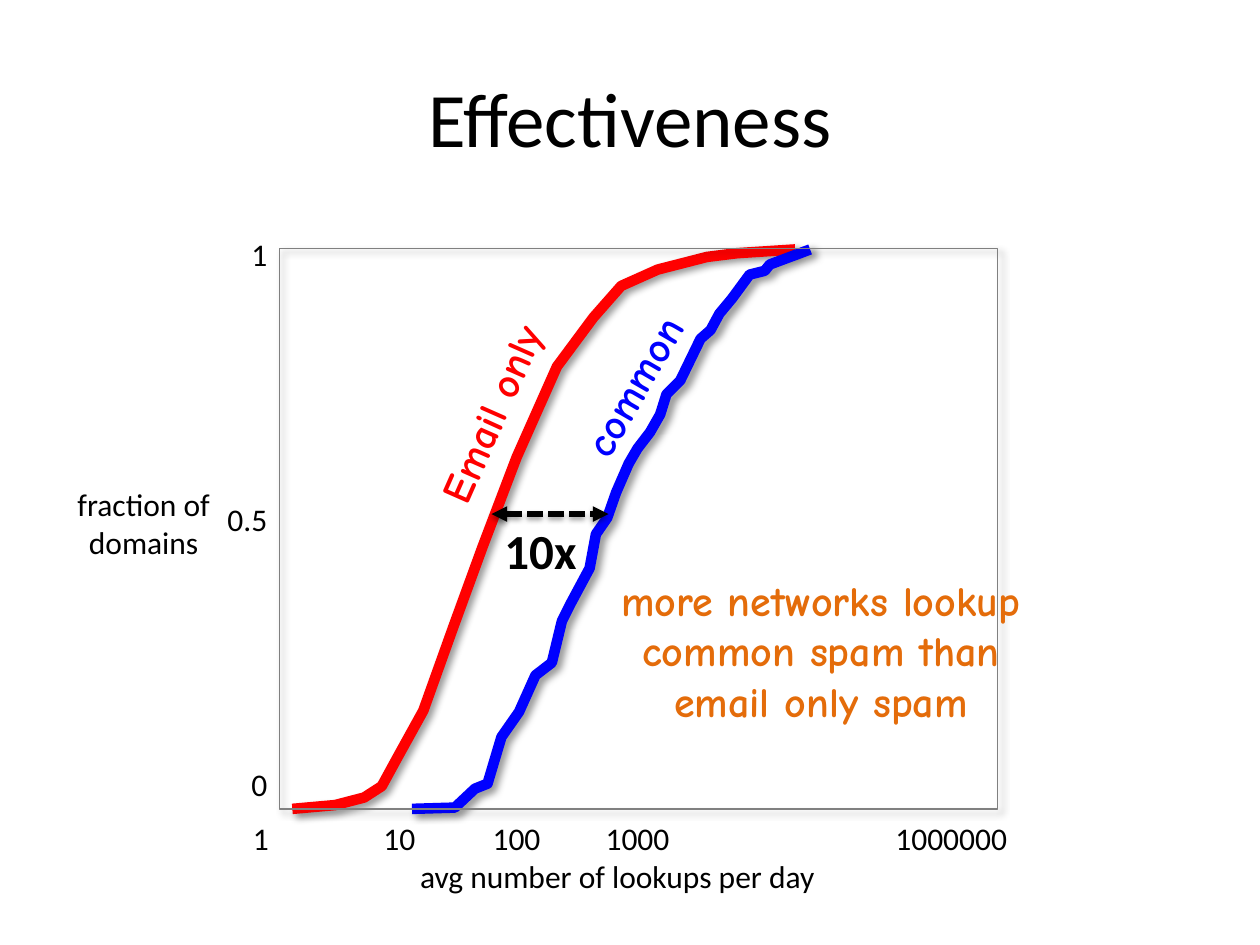
"""Build the Effectiveness slide: two cumulative curves of lookups per day."""
import pptx
import pptx.util
import pptx.dml.color
import pptx.enum.dml
import pptx.enum.shapes
import pptx.enum.text
import pptx.oxml
import pptx.oxml.ns

Inches = pptx.util.Inches
Pt = pptx.util.Pt
RGBColor = pptx.dml.color.RGBColor
Align = pptx.enum.text.PP_ALIGN
Anchor = pptx.enum.text.MSO_ANCHOR

BLACK = RGBColor(0, 0, 0)
RED = RGBColor(255, 0, 0)
BLUE = RGBColor(0, 0, 255)
GRAY = RGBColor(0x80, 0x80, 0x80)
ORANGE = RGBColor(0xE4, 0x6C, 0x0A)
BODY, HAND = "Calibri", "Comic Neue"

CURVES = [
    (RED, [(2.32, 6.42), (2.66, 6.39), (2.89, 6.33), (3.03, 6.24), (3.15, 6.02),
           (3.36, 5.64), (3.6, 4.97), (3.83, 4.34), (4.1, 3.63), (4.42, 2.91),
           (4.71, 2.52), (4.93, 2.27), (5.22, 2.14), (5.61, 2.04), (5.85, 2.01),
           (6.31, 1.98)]),
    (BLUE, [(3.27, 6.42), (3.61, 6.41), (3.77, 6.26), (3.87, 6.22), (3.98, 5.85),
            (4.12, 5.65), (4.25, 5.36), (4.38, 5.26), (4.46, 4.93), (4.53, 4.79),
            (4.68, 4.51), (4.73, 4.24), (4.82, 4.11), (4.89, 3.91), (4.99, 3.68),
            (5.06, 3.56), (5.16, 3.43), (5.24, 3.29), (5.29, 3.13), (5.4, 3.02),
            (5.56, 2.69), (5.64, 2.62), (5.71, 2.49), (5.81, 2.37), (5.95, 2.18),
            (6.07, 2.15), (6.11, 2.1), (6.43, 1.98)]),
]
PLOT = (2.22, 1.97, 5.7, 4.45)
X_TICKS = [("1", 2.07), ("10", 3.17), ("100", 4.1), ("1000", 5.06), ("1000000", 7.55)]
Y_TICKS = ["1", "0.5", "0"]
Y_TICK_TOP, Y_TICK_GAP = 1.82, 2.1
TICK_WIDTH, TICK_HEIGHT = 1.2, 0.4
CENTERED_LABELS = [
    (["avg number of lookups per day"], (1.58, 6.75, 6.64, 0.4), 18, BODY, BLACK, False, 0),
    (["fraction of", "domains"], (0.5, 3.8, 1.28, 0.71), 18, BODY, BLACK, False, 0),
    (["common"], (4.31, 2.81, 1.43, 0.5), 24, HAND, BLUE, True, 300.1),
    (["Email only"], (2.94, 3.03, 1.91, 0.5), 24, HAND, RED, True, 293.8),
    (["10x"], (3.9, 4.08, 0.78, 0.57), 28, BODY, BLACK, True, 0),
    (["more networks lookup", "common spam than", "email only spam"],
     (4.67, 4.51, 3.69, 1.31), 24, HAND, ORANGE, True, 0),
]


def add_run(paragraph, text, size, font, color, bold=False):
    run = paragraph.add_run()
    run.text = text
    run.font.size = Pt(size)
    run.font.name = font
    run.font.bold = bold
    run.font.color.rgb = color


def add_label(slide, lines, box, size=18, font=BODY, color=BLACK, bold=False,
              rotation=0, align=Align.CENTER):
    label = slide.shapes.add_textbox(*map(Inches, box))
    label.rotation = rotation
    frame = label.text_frame
    frame.word_wrap = False
    for index, line in enumerate(lines):
        paragraph = frame.paragraphs[0] if index == 0 else frame.add_paragraph()
        paragraph.alignment = align
        add_run(paragraph, line, size, font, color, bold)


def set_shadow(shape, alpha=40, blur=4, distance=3, angle=45):
    properties = shape._element.spPr
    for old in properties.findall(pptx.oxml.ns.qn("a:effectLst")):
        properties.remove(old)
    properties.append(pptx.oxml.parse_xml(
        f'<a:effectLst {pptx.oxml.ns.nsdecls("a")}>'
        f'<a:outerShdw blurRad="{Pt(blur)}" dist="{Pt(distance)}" dir="{angle * 60000}" '
        f'algn="tl" rotWithShape="0"><a:srgbClr val="000000">'
        f'<a:alpha val="{alpha * 1000}"/></a:srgbClr></a:outerShdw></a:effectLst>'))


def style_outline(shape, color, width):
    shape.fill.background()
    shape.line.color.rgb = color
    shape.line.width = Pt(width)
    set_shadow(shape)


def add_curve(slide, color, points):
    start, *rest = [(Inches(x), Inches(y)) for x, y in points]
    builder = slide.shapes.build_freeform(*start)
    builder.add_line_segments(rest, close=False)
    style_outline(builder.convert_to_shape(), color, 6)


def add_gap_arrow(slide):
    arrow = slide.shapes.add_connector(
        pptx.enum.shapes.MSO_CONNECTOR.STRAIGHT, *map(Inches, (3.9, 4.08, 4.83, 4.08)))
    arrow.line.color.rgb = BLACK
    arrow.line.width = Pt(3)
    arrow.line.dash_style = pptx.enum.dml.MSO_LINE.SQUARE_DOT
    outline = arrow.line._get_or_add_ln()
    for end in ("headEnd", "tailEnd"):
        outline.append(pptx.oxml.parse_xml(
            f'<a:{end} {pptx.oxml.ns.nsdecls("a")} type="triangle"/>'))
    set_shadow(arrow, 38, 3.1, 1.6, 90)


def main():
    deck = pptx.Presentation()
    deck.slide_width, deck.slide_height = Inches(10), Inches(7.5)
    slide = deck.slides.add_slide(deck.slide_layouts[5])

    title = slide.shapes.title
    title.left, title.top, title.width, title.height = map(Inches, (0.5, 0.3, 9, 1.25))
    title.text_frame.vertical_anchor = Anchor.MIDDLE
    heading = title.text_frame.paragraphs[0]
    heading.alignment = Align.CENTER
    add_run(heading, "Effectiveness", 44, BODY, BLACK)

    for color, points in CURVES:
        add_curve(slide, color, points)
    plot = slide.shapes.add_shape(
        pptx.enum.shapes.MSO_SHAPE.RECTANGLE, *map(Inches, PLOT))
    style_outline(plot, GRAY, 0.75)

    for text, center in X_TICKS:
        add_label(slide, [text], (center - TICK_WIDTH / 2, 6.45, TICK_WIDTH, TICK_HEIGHT))
    for row, text in enumerate(Y_TICKS):
        top = Y_TICK_TOP + row * Y_TICK_GAP
        add_label(slide, [text], (PLOT[0] - TICK_WIDTH, top, TICK_WIDTH, TICK_HEIGHT),
                  align=Align.RIGHT)
    add_gap_arrow(slide)
    for label in CENTERED_LABELS:
        add_label(slide, *label)

    deck.save("out.pptx")


if __name__ == "__main__":
    main()
